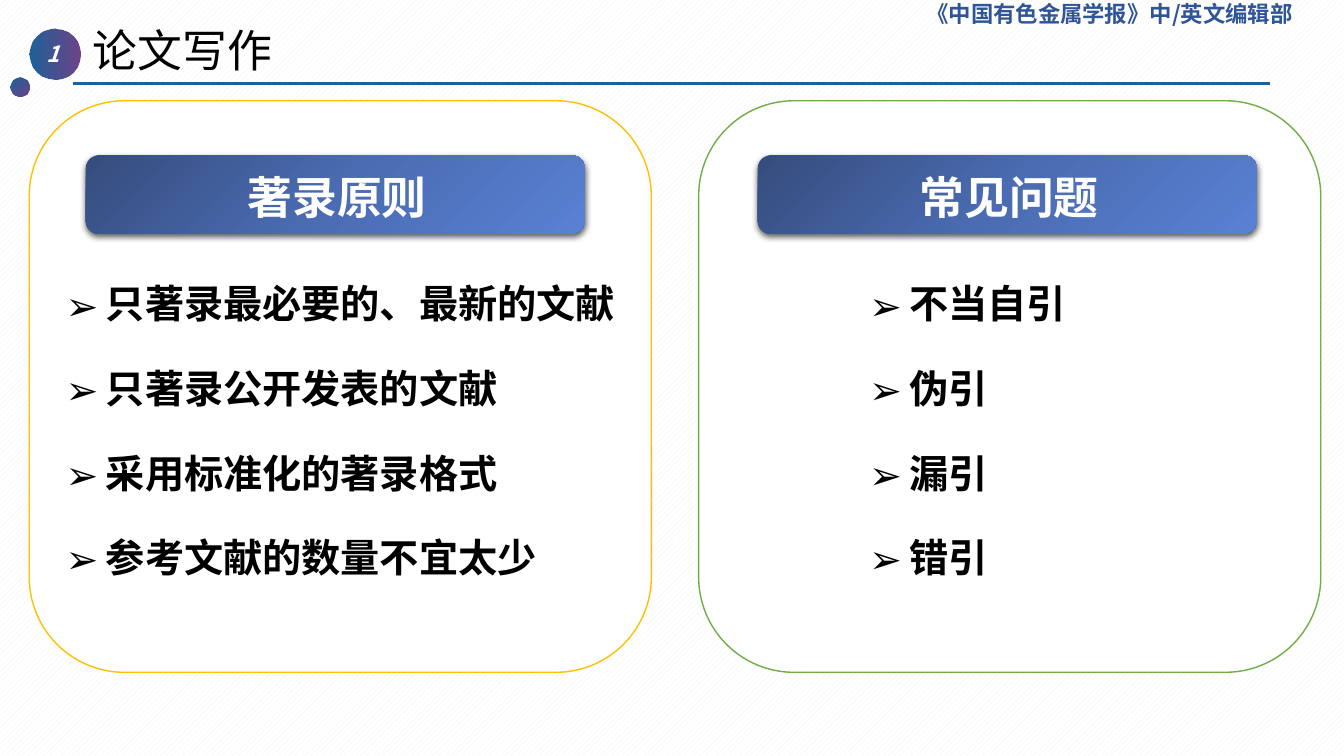
import pptx
import pptx.util
import pptx.dml.color
import pptx.enum.dml
import pptx.enum.shapes
import pptx.enum.text
import pptx.oxml
import pptx.oxml.ns

RGB = pptx.dml.color.RGBColor
SHAPE = pptx.enum.shapes.MSO_SHAPE
ALIGN = pptx.enum.text.PP_ALIGN
ANCHOR = pptx.enum.text.MSO_ANCHOR
inches = pptx.util.Inches

# Content
TITLE = "论文写作"
NUMBER = "1"
JOURNAL = "《中国有色金属学报》中/英文编辑部"
BLACK, WHITE = RGB(0, 0, 0), RGB(255, 255, 255)
PALE, NAVY = RGB(0xF2, 0xF2, 0xF2), RGB(0x2F, 0x55, 0x97)
TEAL, PURPLE = RGB(0x1C, 0x62, 0x99), RGB(0x5C, 0x30, 0x7D)
GOLD, GREEN = RGB(0xFF, 0xC0, 0x00), RGB(0x70, 0xAD, 0x47)
CHIP_BLUES = [RGB(0x35, 0x4C, 0x7D), RGB(0x4B, 0x6C, 0xB2), RGB(0x59, 0x80, 0xD3)]
COLUMNS = [
    {"heading": "著录原则", "line": GOLD, "list_inset": 0.26,
     "items": ["只著录最必要的、最新的文献", "只著录公开发表的文献",
               "采用标准化的著录格式", "参考文献的数量不宜太少"]},
    {"heading": "常见问题", "line": GREEN, "list_inset": 1.59,
     "items": ["不当自引", "伪引", "漏引", "错引"]},
]

# Grid
WIDTH, HEIGHT = 13.33, 7.5
PANEL_LEFT, PANEL_TOP, PANEL_WIDTH, PANEL_HEIGHT = 0.29, 1, 6.17, 5.67
PANEL_STEP = 6.64
CHIP_LEFT, CHIP_TOP, CHIP_WIDTH, CHIP_HEIGHT = 0.85, 1.54, 4.95, 0.78
LIST_TOP, LIST_HEIGHT = 2.49, 3.17
CJK_FONT = "Noto Sans CJK SC"
DRAWING = pptx.oxml.ns.nsdecls("a")


def place(item, left, top, width, height):
    item.left, item.top = inches(left), inches(top)
    item.width, item.height = inches(width), inches(height)


def write(box, lines, size, color, font=CJK_FONT, bold=False, italic=False,
          align=ALIGN.LEFT, anchor=ANCHOR.TOP, insets=(0.1, 0.05, 0.1, 0.05),
          wrap=True, spacing=1.0, before=0, bullet=None, hang=0):
    frame = box.text_frame
    frame.auto_size = pptx.enum.text.MSO_AUTO_SIZE.NONE
    frame.word_wrap, frame.vertical_anchor = wrap, anchor
    (frame.margin_left, frame.margin_top,
     frame.margin_right, frame.margin_bottom) = map(inches, insets)
    for index, line in enumerate(lines):
        para = frame.add_paragraph() if index else frame.paragraphs[0]
        para.alignment, para.line_spacing = align, spacing
        para.space_before = pptx.util.Pt(before if index else 0)
        if bullet:
            props = para._p.get_or_add_pPr()
            props.set("marL", str(inches(hang)))
            props.set("indent", str(-inches(hang)))
            props.append(pptx.oxml.parse_xml(f'<a:buFont {DRAWING} typeface="{font}"/>'))
            props.append(pptx.oxml.parse_xml(f'<a:buChar {DRAWING} char="{bullet}"/>'))
        span = para.add_run()
        span.text = line
        span.font.name, span.font.size = font, pptx.util.Pt(size)
        span.font.bold, span.font.italic = bold, italic
        span.font.color.rgb = color
        span.font._element.append(
            pptx.oxml.parse_xml(f'<a:ea {DRAWING} typeface="{CJK_FONT}"/>'))


def add_shape(page, kind, left, top, width, height):
    shape = page.shapes.add_shape(kind, *map(inches, (left, top, width, height)))
    shape.shadow.inherit = False
    shape.line.fill.background()
    return shape


def fill_gradient(shape, colors, angle, end_alpha=100):
    last = len(colors) - 1
    stops = "".join(
        f'<a:gs pos="{100000 * index // last}"><a:srgbClr val="{color}">'
        f'<a:alpha val="{1000 * (end_alpha if index == last else 100)}"/>'
        '</a:srgbClr></a:gs>' for index, color in enumerate(colors))
    shape._element.spPr.insert(2, pptx.oxml.parse_xml(
        f'<a:gradFill {DRAWING} rotWithShape="1"><a:gsLst>{stops}</a:gsLst>'
        f'<a:lin ang="{angle * 60000}" scaled="0"/></a:gradFill>'))


def add_shadow(shape):
    effects = shape._element.spPr.find(pptx.oxml.ns.qn("a:effectLst"))
    effects.append(pptx.oxml.parse_xml(
        f'<a:outerShdw {DRAWING} blurRad="57150" dist="19050" dir="5400000" '
        'algn="ctr" rotWithShape="0"><a:srgbClr val="000000">'
        '<a:alpha val="63000"/></a:srgbClr></a:outerShdw>'))


def main():
    deck = pptx.Presentation()
    deck.slide_width, deck.slide_height = inches(WIDTH), inches(HEIGHT)
    page = deck.slides.add_slide(deck.slide_layouts.get_by_name("Two Content"))
    title, *lists = page.placeholders

    # Background hatching
    back = page.background.fill
    back.patterned()
    back.pattern = pptx.enum.dml.MSO_PATTERN.WIDE_UPWARD_DIAGONAL
    back.fore_color.rgb, back.back_color.rgb = PALE, WHITE

    # Title, rule and number badge
    place(title, 0.82, 0.18, 3.95, 0.64)
    write(title, [TITLE], 32, BLACK)
    rule = page.shapes.add_connector(
        pptx.enum.shapes.MSO_CONNECTOR.STRAIGHT,
        *map(inches, (0.72, 0.83, 12.6, 0.83)))
    rule.line.color.rgb, rule.line.width = TEAL, pptx.util.Pt(1.75)
    rule._element.spPr.append(pptx.oxml.parse_xml(f"<a:effectLst {DRAWING}/>"))
    badge = add_shape(page, SHAPE.OVAL, 0.29, 0.28, 0.51, 0.51)
    fill_gradient(badge, [TEAL, PURPLE], 0, end_alpha=90)
    write(badge, [NUMBER], 16, WHITE, bold=True, italic=True, align=ALIGN.CENTER,
          anchor=ANCHOR.MIDDLE, insets=(0, 0, 0.04, 0), wrap=False)
    dot = add_shape(page, SHAPE.OVAL, 0.1, 0.77, 0.19, 0.19)
    fill_gradient(dot, [TEAL, PURPLE], 50, end_alpha=90)

    # Journal name
    journal = page.shapes.add_textbox(*map(inches, (9.09, 0, 4.2, 0.32)))
    write(journal, [JOURNAL], 16, NAVY, bold=True, insets=(0.1, 0, 0, 0))

    # Two columns: panel, heading chip, list
    for index, (column, body) in enumerate(zip(COLUMNS, lists)):
        left = PANEL_LEFT + index * PANEL_STEP
        panel = add_shape(page, SHAPE.ROUNDED_RECTANGLE,
                          left, PANEL_TOP, PANEL_WIDTH, PANEL_HEIGHT)
        panel.fill.solid()
        panel.fill.fore_color.rgb = WHITE
        panel.line.color.rgb, panel.line.width = column["line"], pptx.util.Pt(1)

        chip = add_shape(page, SHAPE.ROUNDED_RECTANGLE,
                         CHIP_LEFT + index * WIDTH / 2, CHIP_TOP, CHIP_WIDTH, CHIP_HEIGHT)
        fill_gradient(chip, CHIP_BLUES, 45)
        add_shadow(chip)
        write(chip, [column["heading"]], 32, WHITE, font="Calibri", bold=True,
              align=ALIGN.CENTER, anchor=ANCHOR.MIDDLE, insets=(0.04, 0.04, 0, 0))

        inset = column["list_inset"]
        place(body, left + inset, LIST_TOP, PANEL_WIDTH - inset, LIST_HEIGHT)
        write(body, column["items"], 28, BLACK, bold=True, spacing=1.5,
              before=10, bullet="➢", hang=0.4)
        page.shapes._spTree.append(body._element)  # bring the list above its panel

    deck.save("out.pptx")


if __name__ == "__main__":
    main()
